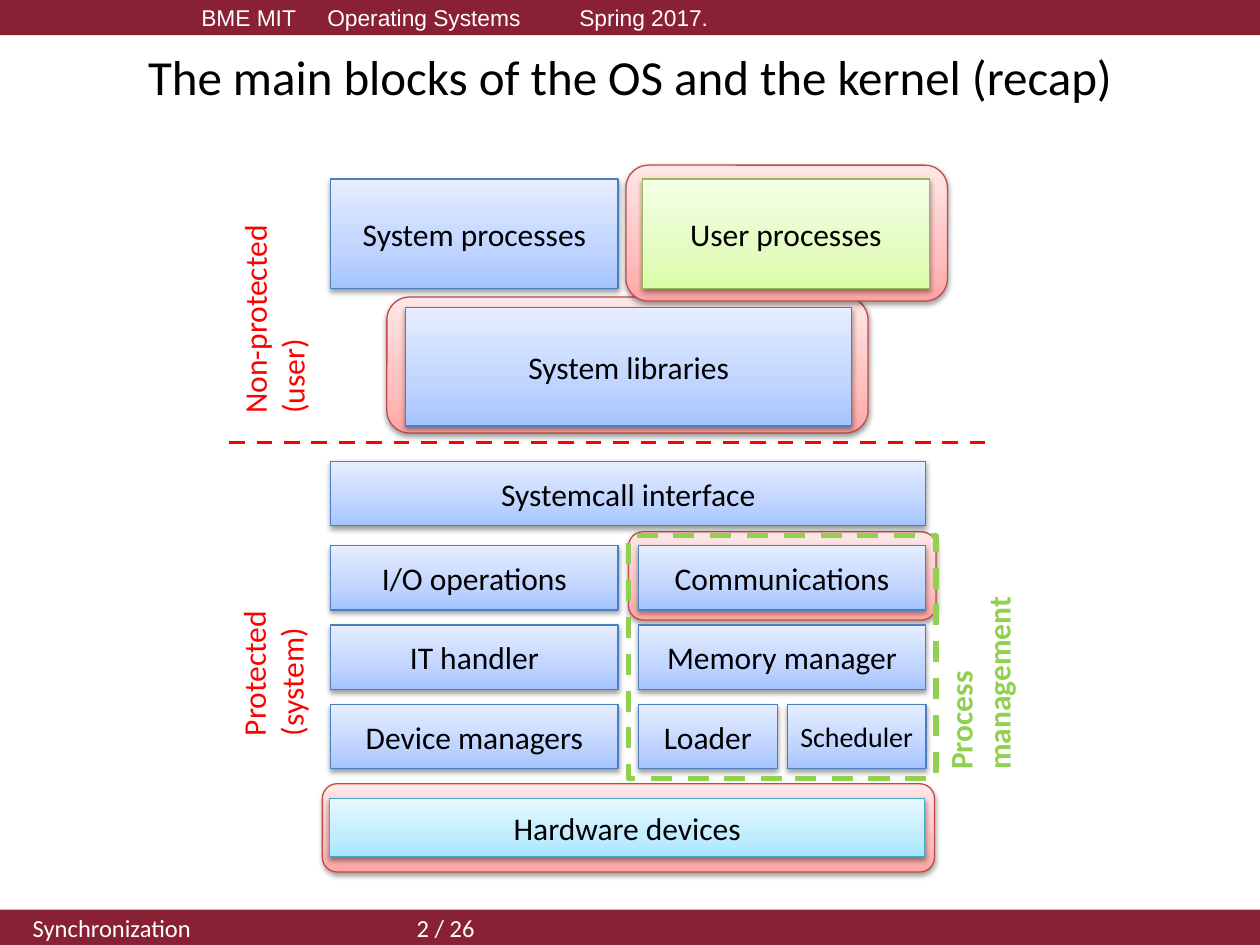
"""Build the slide on the main blocks of the OS and the kernel."""
from copy import deepcopy

from lxml import etree
from pptx import Presentation
from pptx import util as u
from pptx.dml.color import RGBColor
from pptx.enum import dml, shapes, text
from pptx.oxml import ns

THEME = {
    "font": "Calibri", "head": "Arial",
    "title": 28, "body": 18, "small": 16, "foot": 14, "top": 13,
    "bar": "892034", "ink": "000000", "paper": "FFFFFF",
    "alert": "FF0000", "group": "92D050",
    "blue": ("A4C4FF", "BFD4FF", "E6EEFF", "4B7EBC"),
    "green": ("DAFDA7", "E4FCC2", "F5FFE7", "98B955"),
    "cyan": ("A7E6FF", "C1EDFF", "E7F8FF", "46AAC5"),
    "red": ("FFA6A5", "FFC0BF", "FFE7E7", "BF4C48"),
}
WIDE, TALL, BAR = 25.4, 19.05, 0.71
LEFT, RIGHT, COL, FULL = 6.67, 12.87, 5.79, 11.99
ROW, STEP, HIGH = 11.0, 1.6, 1.3
HALF, GAP = 2.8, 0.2

TITLE = "The main blocks of the OS and the kernel (recap)"
BARS = [
    (0, "BME MIT\tOperating Systems\tSpring 2017.", 4.06, (2.54, 7.62), "head", "top"),
    (TALL - BAR, "Synchronization\t\t2 / 26", 0.66, (5.08, 7.74), "font", "foot"),
]
HALOS = [
    (12.67, 10.72, 6.2, 1.78),
    (6.5, 15.8, 12.34, 1.78),
    (7.8, 5.99, 9.7, 2.74),
    (12.62, 3.33, 6.48, 2.74),
]
BLOCKS = [
    ("Hardware devices", (6.65, 16.1, FULL, 1.17), "cyan"),
    ("System libraries", (8.18, 6.2, 8.99, 2.39), "blue"),
    ("System processes", (LEFT, 3.61, COL, 2.21), "blue"),
    ("User processes", (12.95, 3.61, COL, 2.21), "green"),
    ("Systemcall interface", (LEFT, 9.3, FULL, HIGH), "blue"),
]
GRID = [
    ("I/O operations", ["Communications"]),
    ("IT handler", ["Memory manager"]),
    ("Device managers", ["Loader", "Scheduler"]),
]
LABELS = [
    ("Non-protected\n(user)", (4.62, 4.5, 2.06, 4.09), "alert", False, False),
    ("Protected\n(system)", (4.6, 11.89, 2.06, 3.2), "alert", False, True),
    ("Process management", (18.85, 11.63, 2.06, 4.14), "group", True, True),
]
FRAME = (12.67, 10.8, 6.2, 4.9)
SPLIT = (4.62, 8.92, 19.86, 8.92)


def cm(box):
    return [u.Cm(n) for n in box]


def tint(name):
    return RGBColor.from_string(THEME[name])


def write(shape, words, size="body", color="ink", font="font", bold=False,
          align="LEFT", anchor="MIDDLE", wrap=True, tabs=()):
    frame = shape.text_frame
    frame.word_wrap = wrap
    frame.vertical_anchor = getattr(text.MSO_ANCHOR, anchor)
    for i, line in enumerate(words.split("\n")):
        para = frame.add_paragraph() if i else frame.paragraphs[0]
        para.alignment = getattr(text.PP_ALIGN, align)
        if tabs:
            stops = etree.SubElement(para._p.get_or_add_pPr(), ns.qn("a:tabLst"))
            for pos in tabs:
                etree.SubElement(stops, ns.qn("a:tab"), pos=str(u.Cm(pos)), algn="l")
        run = para.add_run()
        run.text = line
        run.font.name = THEME[font]
        run.font.size = u.Pt(THEME[size])
        run.font.bold = bold
        run.font.color.rgb = tint(color)


def plate(slide, kind, box, hue):
    shape = slide.shapes.add_shape(kind, *cm(box))
    *tones, edge = THEME[hue]
    shape.fill.gradient()
    shape.fill.gradient_angle = 90
    stops = shape._element.spPr.find(".//" + ns.qn("a:gsLst"))
    stops.insert(1, deepcopy(stops[0]))
    for stop, tone, pos in zip(shape.fill.gradient_stops, tones, (0, 0.35, 1)):
        stop.color.rgb = RGBColor.from_string(tone)
        stop.position = pos
    shape.line.color.rgb = RGBColor.from_string(edge)
    shape.line.width = u.Pt(0.75)
    shape.shadow.inherit = False
    glow = etree.SubElement(
        shape._element.spPr.find(ns.qn("a:effectLst")), ns.qn("a:outerShdw"),
        blurRad=str(u.Pt(3.1)), dist=str(u.Pt(1.6)), dir="5400000", rotWithShape="0")
    shade = etree.SubElement(glow, ns.qn("a:srgbClr"), val=THEME["ink"])
    etree.SubElement(shade, ns.qn("a:alpha"), val="38000")
    return shape


def dash(line, color, width):
    line.color.rgb = tint(color)
    line.width = u.Pt(width)
    line.dash_style = dml.MSO_LINE.DASH


def cells():
    for i, (left, right) in enumerate(GRID):
        top = ROW + i * STEP
        yield left, (LEFT, top, COL, HIGH), "blue"
        wide = COL if len(right) == 1 else HALF
        for j, name in enumerate(right):
            yield name, (RIGHT + j * (wide + GAP), top, wide, HIGH), "blue"


def main():
    deck = Presentation()
    deck.slide_width, deck.slide_height = cm((WIDE, TALL))
    slide = deck.slides.add_slide(deck.slide_layouts[6])
    rect = shapes.MSO_SHAPE.RECTANGLE

    for top, words, inset, tabs, font, size in BARS:
        bar = slide.shapes.add_shape(rect, *cm((0, top, WIDE, BAR)))
        bar.fill.solid()
        bar.fill.fore_color.rgb = tint("bar")
        bar.line.fill.background()
        bar.shadow.inherit = False
        bar.text_frame.margin_left = u.Cm(inset)
        write(bar, words, size=size, color="paper", font=font, tabs=tabs)

    for box in HALOS:
        plate(slide, shapes.MSO_SHAPE.ROUNDED_RECTANGLE, box, "red")

    head = slide.shapes.add_textbox(*cm((1.27, 0.76, 22.86, 1.55)))
    write(head, TITLE, size="title", align="CENTER")

    for words, box, hue in BLOCKS + list(cells()):
        size = "small" if words == "Scheduler" else "body"
        write(plate(slide, rect, box, hue), words, size=size, align="CENTER")

    split = slide.shapes.add_connector(shapes.MSO_CONNECTOR.STRAIGHT, *cm(SPLIT))
    dash(split.line, "alert", 2.25)
    etree.SubElement(split._element.spPr, ns.qn("a:effectLst"))

    frame = slide.shapes.add_shape(rect, *cm(FRAME))
    frame.fill.background()
    frame.shadow.inherit = False
    dash(frame.line, "group", 3)

    for words, box, color, bold, wrap in LABELS:
        label = slide.shapes.add_textbox(*cm(box))
        label.text_frame._txBody.bodyPr.set("vert", "vert270")
        write(label, words, color=color, bold=bold, anchor="TOP", wrap=wrap)
        label.text_frame.auto_size = text.MSO_AUTO_SIZE.SHAPE_TO_FIT_TEXT

    deck.save("out.pptx")


if __name__ == "__main__":
    main()
